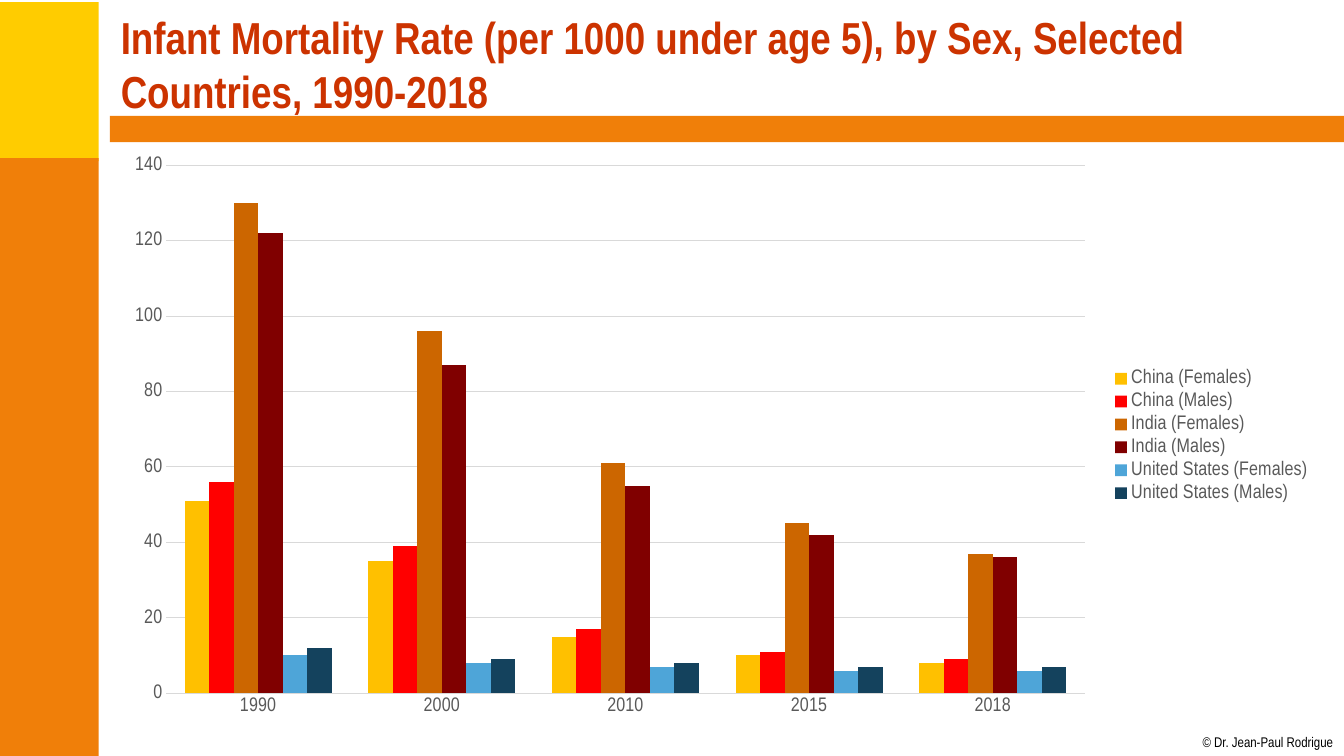
from dataclasses import dataclass

from pptx import Presentation
from pptx.chart.chart import Chart
from pptx.chart.data import CategoryChartData
from pptx.dml.color import RGBColor
from pptx.enum.chart import XL_CHART_TYPE, XL_LEGEND_POSITION, XL_TICK_MARK
from pptx.enum.shapes import MSO_SHAPE
from pptx.enum.text import MSO_ANCHOR
from pptx.slide import Slide
from pptx.text.text import Font
from pptx.util import Pt

RECTANGLE = MSO_SHAPE.RECTANGLE
MIDDLE = MSO_ANCHOR.MIDDLE
CLUSTERED = XL_CHART_TYPE.COLUMN_CLUSTERED
LEGEND_RIGHT = XL_LEGEND_POSITION.RIGHT
NO_TICKS = XL_TICK_MARK.NONE


@dataclass(frozen=True)
class Theme:
    font: str = "Arial Narrow"
    yellow: str = "FFCC00"
    orange: str = "F07F09"
    title: str = "CC3300"
    credit: str = "000000"
    chart_text: str = "595959"
    grid: str = "D9D9D9"
    title_size: float = 32
    chart_size: float = 14
    credit_size: float = 10
    grid_width: float = 0.75


@dataclass(frozen=True)
class Box:
    left: float
    top: float
    width: float
    height: float

    def lengths(self) -> tuple[Pt, Pt, Pt, Pt]:
        return Pt(self.left), Pt(self.top), Pt(self.width), Pt(self.height)


@dataclass(frozen=True)
class Band:
    box: Box
    color: str


@dataclass(frozen=True)
class Label:
    box: Box
    text: str
    size: float
    color: str
    bold: bool = False
    wrap: bool = True
    margin_x: float = 7.2
    margin_y: float = 3.6


@dataclass(frozen=True)
class Series:
    name: str
    color: str
    values: tuple[int, ...]


THEME = Theme()
BANDS = (
    Band(Box(-1.44, 1.44, 72, 113.76), THEME.yellow),
    Band(Box(-1.44, 113.04, 72, 426.96), THEME.orange),
    Band(Box(78.5, 82.8, 881.5, 18.72), THEME.orange),
)
LABELS = (
    Label(Box(858.96, 524.16, 94.32, 12.24), "© Dr. Jean-Paul Rodrigue",
          THEME.credit_size, THEME.credit, wrap=False, margin_x=0, margin_y=0),
    Label(Box(79.2, 7.92, 864, 74.88),
          "Infant Mortality Rate (per 1000 under age 5), by Sex, Selected Countries, 1990-2018",
          THEME.title_size, THEME.title, bold=True),
)
CHART_BOX = Box(79.2, 102.96, 865.44, 416.88)
YEARS = ("1990", "2000", "2010", "2015", "2018")
MORTALITY = (
    Series("China (Females)", "FFC000", (51, 35, 15, 10, 8)),
    Series("China (Males)", "FF0000", (56, 39, 17, 11, 9)),
    Series("India (Females)", "CC6600", (130, 96, 61, 45, 37)),
    Series("India (Males)", "800000", (122, 87, 55, 42, 36)),
    Series("United States (Females)", "4EA5D8", (10, 8, 7, 6, 6)),
    Series("United States (Males)", "14425D", (12, 9, 8, 7, 7)),
)


def style_font(font: Font, size: float, color: str, bold: bool = False) -> None:
    font.name = THEME.font
    font.size = Pt(size)
    font.bold = bold
    font.color.rgb = RGBColor.from_string(color)


def add_band(slide: Slide, band: Band) -> None:
    shape = slide.shapes.add_shape(RECTANGLE, *band.box.lengths())
    shape.shadow.inherit = False
    shape.fill.solid()
    shape.fill.fore_color.rgb = RGBColor.from_string(band.color)
    shape.line.fill.background()


def add_label(slide: Slide, label: Label) -> None:
    frame = slide.shapes.add_textbox(*label.box.lengths()).text_frame
    frame.word_wrap = label.wrap
    frame.vertical_anchor = MIDDLE
    frame.margin_left = frame.margin_right = Pt(label.margin_x)
    frame.margin_top = frame.margin_bottom = Pt(label.margin_y)
    run = frame.paragraphs[0].add_run()
    run.text = label.text
    style_font(run.font, label.size, label.color, label.bold)


def style_axes(chart: Chart) -> None:
    for axis in (chart.category_axis, chart.value_axis):
        axis.major_tick_mark = NO_TICKS
        axis.minor_tick_mark = NO_TICKS
        style_font(axis.tick_labels.font, THEME.chart_size, THEME.chart_text)
    value_axis = chart.value_axis
    value_axis.minimum_scale = 0
    value_axis.maximum_scale = 140
    value_axis.major_unit = 20
    value_axis.has_major_gridlines = True
    value_axis.format.line.fill.background()
    for line in (chart.category_axis.format.line, value_axis.major_gridlines.format.line):
        line.color.rgb = RGBColor.from_string(THEME.grid)
        line.width = Pt(THEME.grid_width)


def add_mortality_chart(slide: Slide) -> None:
    data = CategoryChartData(number_format="0")
    data.categories = YEARS
    for series in MORTALITY:
        data.add_series(series.name, series.values)
    chart = slide.shapes.add_chart(CLUSTERED, *CHART_BOX.lengths(), data).chart
    style_font(chart.font, THEME.chart_size, THEME.chart_text)
    chart.has_title = False
    chart.has_legend = True
    chart.legend.position = LEGEND_RIGHT
    chart.legend.include_in_layout = False
    style_font(chart.legend.font, THEME.chart_size, THEME.chart_text)
    style_axes(chart)
    plot = chart.plots[0]
    plot.gap_width = 150
    plot.overlap = 0
    plot.vary_by_categories = False
    for column, series in zip(plot.series, MORTALITY):
        column.format.fill.solid()
        column.format.fill.fore_color.rgb = RGBColor.from_string(series.color)


def main() -> None:
    presentation = Presentation()
    presentation.slide_width = Pt(960)
    presentation.slide_height = Pt(540)
    slide = presentation.slides.add_slide(presentation.slide_layouts[6])
    for band in BANDS:
        add_band(slide, band)
    for label in LABELS:
        add_label(slide, label)
    add_mortality_chart(slide)
    presentation.save("out.pptx")


if __name__ == "__main__":
    main()
